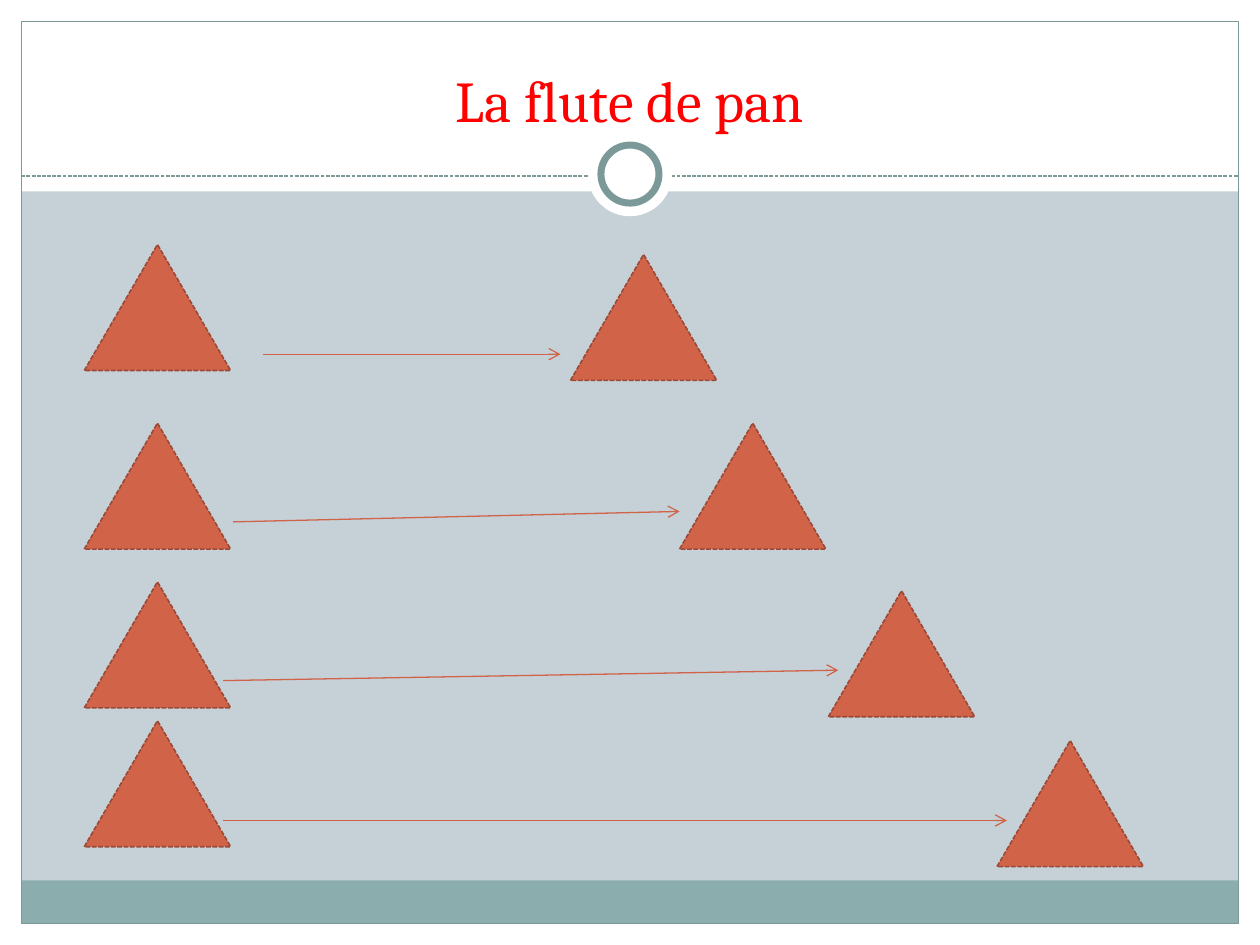
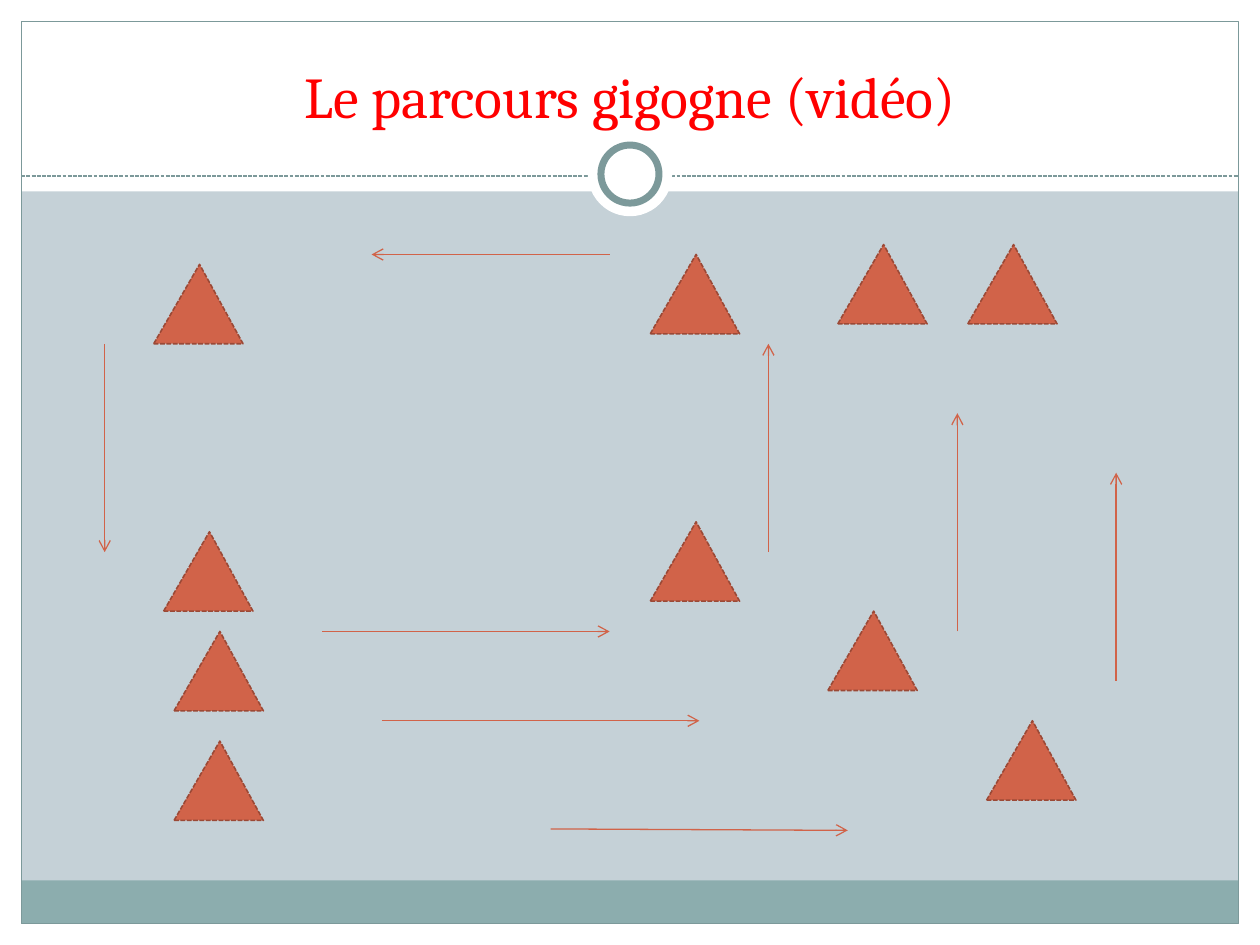
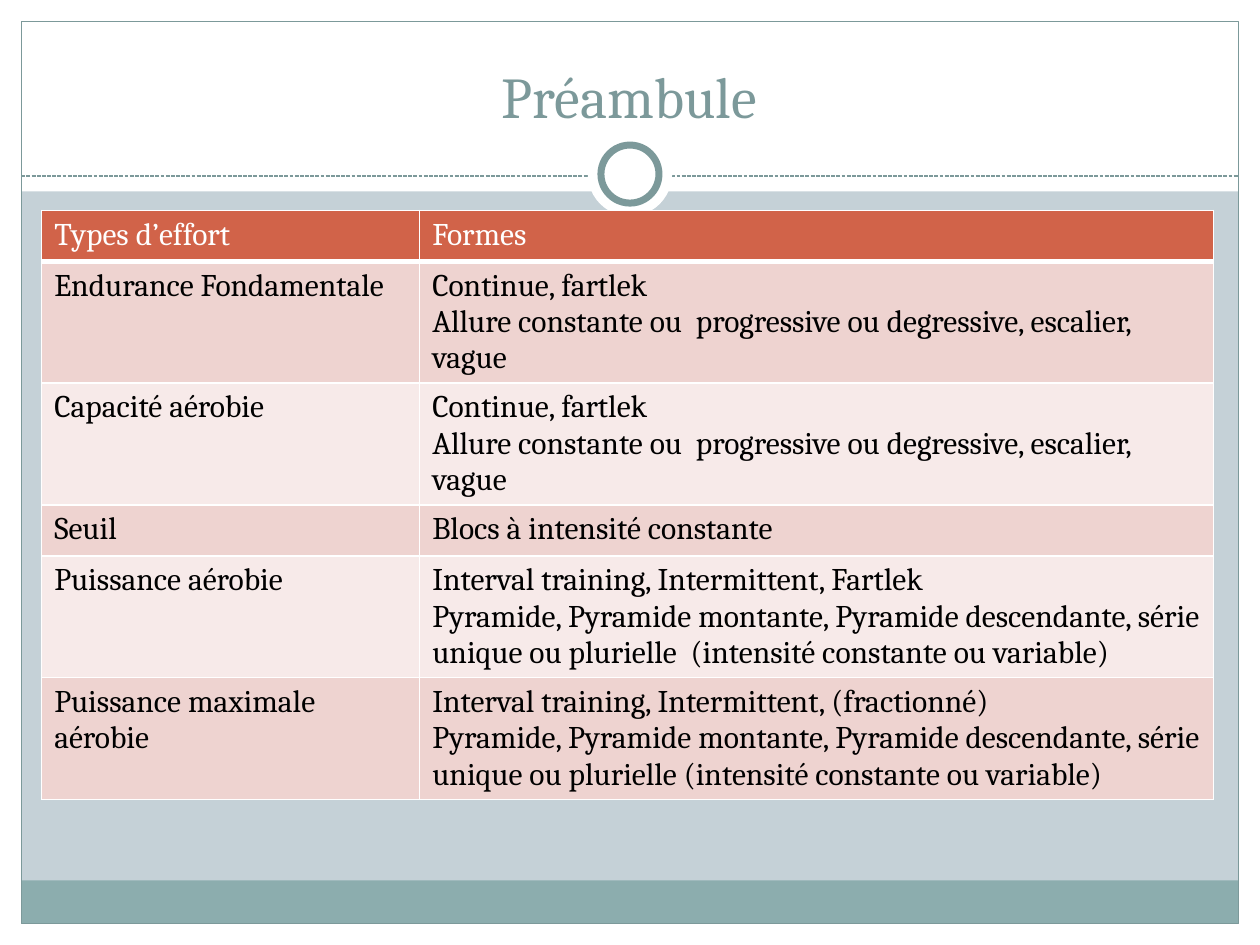
from collections import namedtuple

from lxml import etree
from pptx import Presentation
from pptx.dml.color import RGBColor
from pptx.enum.dml import MSO_LINE
from pptx.enum.shapes import MSO_CONNECTOR, MSO_SHAPE
from pptx.enum.text import MSO_ANCHOR, MSO_AUTO_SIZE, PP_ALIGN
from pptx.oxml.ns import qn
from pptx.util import Cm, Pt

COLORS = {
    "white": "FFFFFF", "black": "000000", "backdrop": "C5D1D7",
    "footer": "8CADAE", "slate": "7C999A", "red": "FF0000",
    "brick": "D16349", "brick_edge": "9B4936",
    "row_dark": "EED3D0", "row_light": "F7EAE9",
}
FONT = "Cambria"
Box = namedtuple("Box", "left top width height")

SLIDE = Box(0, 0, 25.4, 19.05)
MARGIN = 0.43
HEADER_HEIGHT = 3.86
BODY = Box(0.4, 3.9, 24.6, 13.9)

# Each row: top of the start cone, corner of the end cone, arrow start and end
FLUTE_START_LEFT = 1.3
FLUTE_ROWS = [
    (1.03, (11.1, 1.23), (4.91, 3.24), (10.9, 3.24)),
    (4.63, (13.3, 4.63), (4.3, 6.62), (13.3, 6.41)),
    (7.83, (16.3, 8.01), (4.1, 9.82), (16.5, 9.61)),
    (10.63, (19.7, 11.03), (4.1, 12.64), (19.9, 12.64)),
]
COURSE_CONES = [
    (12.71, 1.23), (16.49, 1.03), (19.11, 1.03), (19.49, 10.63), (16.29, 8.42),
    (3.11, 11.04), (3.11, 8.83), (12.71, 6.62), (2.9, 6.82), (2.7, 1.43),
]
COURSE_ARROWS = [
    ((18.9, 8.83), (18.9, 4.43)),
    ((15.09, 7.23), (15.09, 3.03)),
    ((6.1, 8.83), (11.89, 8.83)),
    ((7.3, 10.63), (13.7, 10.63)),
    ((10.7, 12.81), (16.69, 12.84)),
    ((11.89, 1.23), (7.09, 1.23)),
    ((22.1, 9.82), (22.1, 5.63)),
    ((1.71, 3.03), (1.71, 7.23)),
]

STEADY = "Continue, fartlek\nAllure constante ou  progressive ou degressive, escalier, vague"
PYRAMID = "Pyramide, Pyramide montante, Pyramide descendante, série unique ou plurielle"
VARIATION = "(intensité constante ou variable)"
EFFORT_ROWS = [
    ("Types d’effort", "Formes"),
    ("Endurance Fondamentale", STEADY),
    ("Capacité aérobie", STEADY),
    ("Seuil", "Blocs à intensité constante"),
    ("Puissance aérobie",
     f"Interval training, Intermittent, Fartlek\n{PYRAMID}  {VARIATION}"),
    ("Puissance maximale aérobie",
     f"Interval training, Intermittent, (fractionné)\n{PYRAMID} {VARIATION}"),
]


def rgb(name):
    return RGBColor.from_string(COLORS[name])


def lengths(box):
    return [Cm(value) for value in box]


def style_line(line, color, width, dashed=False):
    line.color.rgb = rgb(color)
    line.width = Pt(width)
    if dashed:
        line.dash_style = MSO_LINE.SQUARE_DOT


def add_figure(page, kind, box, fill=None, edge=None, width=0.75, dashed=False):
    figure = page.shapes.add_shape(kind, *lengths(box))
    figure.shadow.inherit = False
    if fill:
        figure.fill.solid()
        figure.fill.fore_color.rgb = rgb(fill)
    else:
        figure.fill.background()
    if edge:
        style_line(figure.line, edge, width, dashed)
    else:
        figure.line.fill.background()
    return figure


def add_line(page, start, end, color, dashed=False):
    line = page.shapes.add_connector(MSO_CONNECTOR.STRAIGHT, *lengths(start + end))
    style_line(line.line, color, 0.75, dashed)
    etree.SubElement(line.element.spPr, qn("a:effectLst"))
    return line


def add_arrow(page, box, start, end):
    """Draw an arrow between two points given relative to the box."""
    points = [(box.left + x, box.top + y) for x, y in (start, end)]
    arrow = add_line(page, *points, "brick")
    outline = arrow.element.spPr.find(qn("a:ln"))
    etree.SubElement(outline, qn("a:tailEnd"), type="arrow")


def add_cone(page, box, corner, size, apex=0.5):
    """Draw a triangle whose corner is given relative to the box."""
    place = Box(box.left + corner[0], box.top + corner[1], *size)
    cone = add_figure(page, MSO_SHAPE.ISOSCELES_TRIANGLE, place,
                      "brick", "brick_edge", 0.9, dashed=True)
    cone.adjustments[0] = apex


def centred_circle(center, diameter):
    return Box(center[0] - diameter / 2, center[1] - diameter / 2, diameter, diameter)


def build_frame(layout, page, box):
    """Draw the shared frame on a page, then hand its parts to the layout."""
    layout.background.fill.solid()
    layout.background.fill.fore_color.rgb = rgb("backdrop")
    right, bottom = box.width - MARGIN, box.height - MARGIN
    inner_width = right - MARGIN
    bands = [
        (Box(0, bottom, box.width, MARGIN), "white"),
        (Box(0, 0, box.width, HEADER_HEIGHT), "white"),
        (Box(0, 0, MARGIN, box.height), "white"),
        (Box(right, 0, MARGIN, box.height), "white"),
        (Box(MARGIN, bottom - 0.87, inner_width, 0.87), "footer"),
    ]
    parts = [add_figure(page, MSO_SHAPE.RECTANGLE, *band) for band in bands]
    border = Box(MARGIN, MARGIN, inner_width, bottom - MARGIN)
    parts.append(add_figure(page, MSO_SHAPE.RECTANGLE, border, edge="slate"))
    parts.append(add_line(page, (MARGIN, 3.55), (right, 3.55), "slate", dashed=True))
    center = (box.width / 2, 3.51)
    parts.append(add_figure(page, MSO_SHAPE.OVAL, centred_circle(center, 1.7), "white"))
    parts.append(add_figure(page, MSO_SHAPE.OVAL, centred_circle(center, 1.17),
                            "white", "slate", 4))
    for part in parts:
        layout.shapes.element.append(part.element)


def set_title(page, box, text, color):
    title = page.shapes.title
    title.left, title.top, title.width, title.height = lengths(box)
    frame = title.text_frame
    frame.text = text
    frame.auto_size = MSO_AUTO_SIZE.NONE
    frame.vertical_anchor = MSO_ANCHOR.BOTTOM
    para = frame.paragraphs[0]
    para.alignment = PP_ALIGN.CENTER
    style_font(para.font, 33, color)


def style_font(font, size, color):
    font.name = FONT
    font.size = Pt(size)
    font.bold = False
    font.color.rgb = rgb(color)


def build_flute(page, box):
    size = (2.95, 2.54)
    for top, end_corner, start, end in FLUTE_ROWS:
        add_cone(page, box, (FLUTE_START_LEFT, top), size)
        add_cone(page, box, end_corner, size)
        add_arrow(page, box, start, end)


def build_course(page, box):
    for corner in COURSE_CONES:
        add_cone(page, box, corner, (1.8, 1.6), apex=0.513)
    for start, end in COURSE_ARROWS:
        add_arrow(page, box, start, end)


def set_borders(cell, bottom_width):
    properties = cell._tc.get_or_add_tcPr()
    for side, width in (("L", 1), ("R", 1), ("T", 1), ("B", bottom_width)):
        border = etree.SubElement(properties, qn(f"a:ln{side}"), w=str(Pt(width)))
        fill = etree.SubElement(border, qn("a:solidFill"))
        etree.SubElement(fill, qn("a:srgbClr"), val=COLORS["white"])


def build_effort_table(page, box):
    table = page.shapes.add_table(len(EFFORT_ROWS), 2, *lengths(box)).table
    table.columns[0].width = Cm(7.62)
    table.columns[1].width = Cm(box.width - 7.62)
    for index, texts in enumerate(EFFORT_ROWS):
        table.rows[index].height = Cm(box.height / len(EFFORT_ROWS))
        is_header = index == 0
        row_fill = "brick" if is_header else ("row_light", "row_dark")[index % 2]
        for column, text in enumerate(texts):
            cell = table.cell(index, column)
            set_borders(cell, 3 if is_header else 1)
            cell.fill.solid()
            cell.fill.fore_color.rgb = rgb(row_fill)
            cell.text = text
            for para in cell.text_frame.paragraphs:
                style_font(para.font, 18, "white" if is_header else "black")


def main():
    deck = Presentation()
    deck.slide_width, deck.slide_height = Cm(SLIDE.width), Cm(SLIDE.height)
    layout = deck.slide_layouts.get_by_name("Title Only")
    flute, course, preamble = [deck.slides.add_slide(layout) for _ in range(3)]
    build_frame(layout, flute, SLIDE)

    set_title(flute, Box(1.27, 0.94, 22.86, 1.9), "La flute de pan", "red")
    build_flute(flute, BODY)

    set_title(course, Box(1.27, 0.84, 22.86, 1.9), "Le parcours gigogne (vidéo)", "red")
    build_course(course, BODY)

    set_title(preamble, Box(0.84, 0.64, 23.7, 2.1), "Préambule", "slate")
    build_effort_table(preamble, Box(0.84, 4.24, 23.62, 6.18))

    deck.save("out.pptx")


if __name__ == "__main__":
    main()
